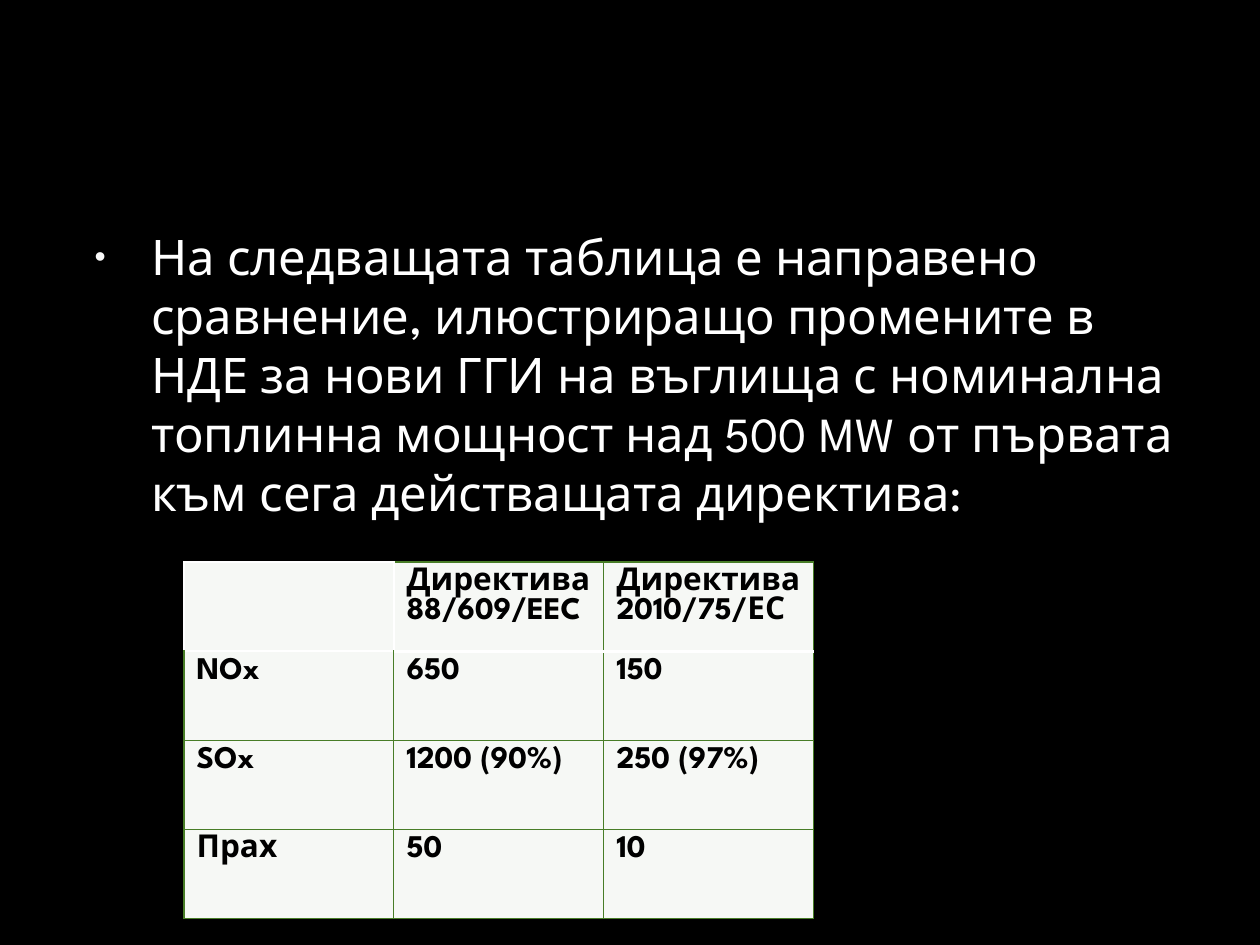
from lxml.etree import SubElement
from pptx import Presentation
from pptx.dml.color import RGBColor
from pptx.enum.text import MSO_ANCHOR, MSO_AUTO_SIZE
from pptx.oxml.ns import qn
from pptx.util import Inches, Pt

FONT = "League Spartan"
BODY = (
    "На следващата таблица е направено сравнение, илюстриращо промените в НДЕ "
    "за нови ГГИ на въглища с номинална топлинна мощност над 500 MW от първата "
    "към сега действащата директива:"
)
ROWS = [
    ["", "Директива 88/609/EEC", "Директива 2010/75/ЕС"],
    ["NOx", "650", "150"],
    ["SOx", "1200 (90%)", "250 (97%)"],
    ["Прах", "50", "10"],
]
BODY_FORMAT = {"name": FONT, "size": Pt(28), "bold": False}
CELL_FORMAT = {"name": FONT, "size": Pt(18), "bold": True}
GREEN_LINE = ("487D27", 0.75)
WHITE_LINE = ("FFFFFF", 1)
HEADER_LINE = ("FFFFFF", 2)


def color(value):
    return RGBColor.from_string(value)


def format_font(font, values, hex_color):
    for name, value in values.items():
        setattr(font, name, value)
    font.color.rgb = color(hex_color)


def add_bullet(paragraph):
    properties = paragraph._p.get_or_add_pPr()
    properties.set("marL", str(Inches(0.6)))
    properties.set("indent", str(Inches(-0.45)))
    bullet_color = SubElement(properties, qn("a:buClr"))
    SubElement(bullet_color, qn("a:srgbClr"), val="F9F9F9")
    SubElement(properties, qn("a:buSzPct"), val="65000")
    SubElement(properties, qn("a:buChar"), char="•")


def cell_borders(row, column):
    borders = dict.fromkeys(("lnL", "lnR", "lnT", "lnB"), GREEN_LINE)
    if row == 0:
        borders["lnB"] = HEADER_LINE
        if column == 0:
            borders = dict.fromkeys(borders, WHITE_LINE)
        elif column == 1:
            borders["lnL"] = WHITE_LINE
    elif row == 1:
        borders["lnT"] = HEADER_LINE if column else WHITE_LINE
    return borders


def draw_borders(cell, borders):
    properties = cell._tc.get_or_add_tcPr()
    for position, (side, (hex_color, width)) in enumerate(borders.items()):
        line = SubElement(properties, qn(f"a:{side}"), w=str(Pt(width)))
        fill = SubElement(line, qn("a:solidFill"))
        SubElement(fill, qn("a:srgbClr"), val=hex_color)
        properties.insert(position, line)


def add_body(slide):
    body = slide.placeholders[1]
    body.left, body.top = Inches(0.5), Inches(1.75)
    body.width, body.height = Inches(9), Inches(5.15)
    frame = body.text_frame
    frame.text = BODY
    frame.auto_size = MSO_AUTO_SIZE.NONE
    paragraph = frame.paragraphs[0]
    paragraph.space_before = Pt(5.6)
    add_bullet(paragraph)
    format_font(paragraph.runs[0].font, BODY_FORMAT, "FFFFFF")


def add_limits_table(slide):
    table = slide.shapes.add_table(
        len(ROWS), len(ROWS[0]), Inches(1.46), Inches(4.46), Inches(5), Inches(2.83)
    ).table
    for row, texts in enumerate(ROWS):
        for column, text in enumerate(texts):
            cell = table.cell(row, column)
            cell.text = text
            cell.vertical_anchor = MSO_ANCHOR.TOP
            cell.fill.solid()
            cell.fill.fore_color.rgb = color("F6F8F5")
            format_font(cell.text_frame.paragraphs[0].font, CELL_FORMAT, "000000")
            for run in cell.text_frame.paragraphs[0].runs:
                format_font(run.font, CELL_FORMAT, "000000")
            draw_borders(cell, cell_borders(row, column))


def main():
    presentation = Presentation()
    presentation.slide_width, presentation.slide_height = Inches(10), Inches(7.5)
    slide = presentation.slides.add_slide(presentation.slide_layouts[1])
    slide.background.fill.solid()
    slide.background.fill.fore_color.rgb = color("000000")
    title = slide.shapes.title.element
    title.getparent().remove(title)
    add_body(slide)
    add_limits_table(slide)
    presentation.save("out.pptx")


if __name__ == "__main__":
    main()
